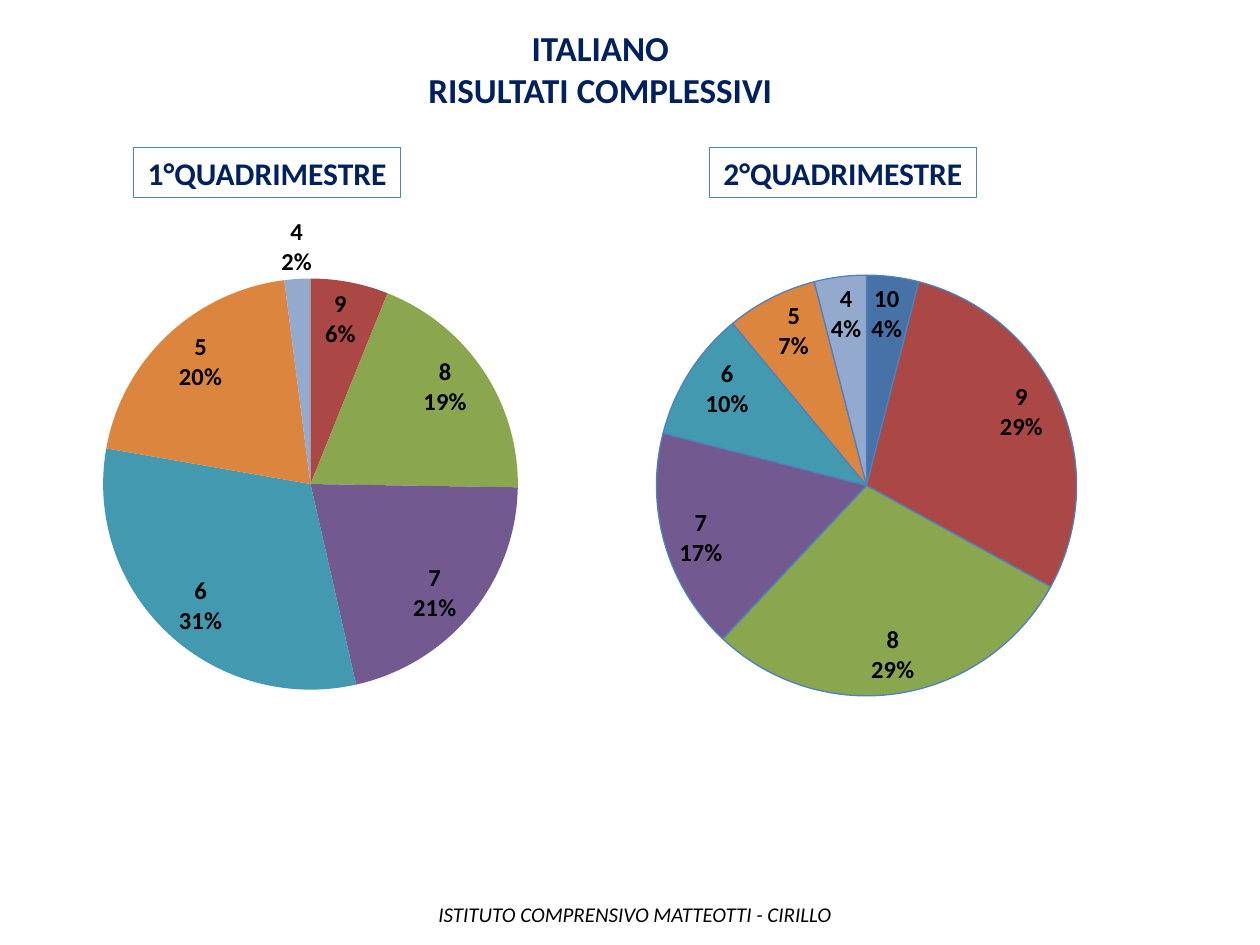
from pptx import Presentation
from pptx.chart.data import CategoryChartData as Data
from pptx.dml.color import RGBColor
from pptx.enum.chart import XL_CHART_TYPE as Kind, XL_LABEL_POSITION as Pos
from pptx.enum.shapes import MSO_SHAPE as Form
from pptx.enum.text import MSO_ANCHOR as Anchor, PP_ALIGN as Align
from pptx.oxml import parse_xml
from pptx.oxml.ns import nsdecls, qn
from pptx.util import Inches, Pt

FONT, NAVY, BLUE, BLACK = "Calibri", "002060", "4F81BD", "000000"
TITLE = ["ITALIANO", "RISULTATI COMPLESSIVI"]
FOOTER = "ISTITUTO COMPRENSIVO MATTEOTTI - CIRILLO"
GRADES = ["10", "9", "8", "7", "6", "5", "4"]
COLORS = ["4672A8", "AB4744", "8AA64F", "725990", "4299B0", "DC853E", "93A9CE"]
TERMS = [
    {"name": "1°QUADRIMESTRE", "left": 1.06, "vals": [0, 6, 19, 21, 31, 20, 2],
     "box": (0.67, 1.68, 3.7, 4.51), "plot": (0.04, 0.11, 0.89, 0.73),
     "edge": None},
    {"name": "2°QUADRIMESTRE", "left": 5.63, "vals": [4, 29, 29, 17, 10, 7, 4],
     "box": (4.92, 1.94, 3.63, 4.35), "plot": (0.08, 0.05, 0.92, 0.78),
     "edge": BLUE},
]


def rgb(code):
    return RGBColor.from_string(code)


def style(font, size, color, bold=False, italic=False):
    font.name, font.size = FONT, Pt(size)
    font.bold, font.italic = bold, italic
    font.color.rgb = rgb(color)


def write(frame, lines, size, color, anchor, **look):
    frame.word_wrap = True
    frame.vertical_anchor = anchor
    for i, line in enumerate(lines):
        para = frame.add_paragraph() if i else frame.paragraphs[0]
        para.alignment = Align.CENTER
        run = para.add_run()
        run.text = line
        style(run.font, size, color, **look)


def place(chart, plot):
    area = chart.plots[0]._element.getparent()
    for old in area.findall(qn("c:layout")):
        area.remove(old)
    parts = "".join(f'<c:{tag} val="{val}"/>' for tag, val in zip("xywh", plot))
    area.insert(0, parse_xml(
        f'<c:layout {nsdecls("c")}><c:manualLayout><c:layoutTarget val="inner"/>'
        '<c:xMode val="edge"/><c:yMode val="edge"/>'
        f'{parts}</c:manualLayout></c:layout>'))


def set_labels(row, vals):
    labels = row.data_labels
    style(labels.font, 14, BLACK, bold=True)
    labels.number_format, labels.number_format_is_linked = "0%", False
    labels.position = Pos.BEST_FIT
    labels.show_value = False
    labels.show_category_name = labels.show_percentage = True
    node = labels._element
    last = node.find(qn("c:showBubbleSize"))
    if last is None:
        last = node.find(qn("c:showPercent"))
    last.addnext(parse_xml(f"<c:separator {nsdecls('c')}>\n</c:separator>"))
    for i, val in enumerate(vals):
        if val == 0:
            node.insert(0, parse_xml(
                f'<c:dLbl {nsdecls("c")}><c:idx val="{i}"/><c:delete val="1"/></c:dLbl>'))


def add_pie(slide, term):
    data = Data()
    data.categories = GRADES
    data.add_series("Series 1", term["vals"])
    chart = slide.shapes.add_chart(Kind.PIE, *map(Inches, term["box"]), data).chart
    chart.has_title = chart.has_legend = False
    style(chart.font, 18, BLACK)
    place(chart, term["plot"])
    pie = chart.plots[0]
    pie.vary_by_categories = True
    row = pie.series[0]
    set_labels(row, term["vals"])
    for i, color in enumerate(COLORS):
        look = row.points[i].format
        look.fill.solid()
        look.fill.fore_color.rgb = rgb(color)
        if term["edge"]:
            look.line.color.rgb = rgb(term["edge"])
            look.line.width = Pt(0.75)
        else:
            look.line.fill.background()


def add_tag(slide, term):
    tag = slide.shapes.add_shape(
        Form.RECTANGLE, *map(Inches, (term["left"], 1.17, 2.12, 0.4)))
    tag.shadow.inherit = False
    tag.fill.background()
    tag.line.color.rgb = rgb(BLUE)
    tag.line.width = Pt(0.75)
    write(tag.text_frame, [term["name"]], 18, NAVY, Anchor.MIDDLE, bold=True)


def main():
    deck = Presentation()
    deck.slide_width, deck.slide_height = Inches(10), Inches(7.5)
    slide = deck.slides.add_slide(deck.slide_layouts[5])
    title = slide.shapes.title
    title.left, title.top, title.width, title.height = map(Inches, (0.83, 0.16, 7.87, 1))
    write(title.text_frame, TITLE, 20, NAVY, Anchor.TOP, bold=True)
    for term in TERMS:
        add_pie(slide, term)
        add_tag(slide, term)
    foot = slide.shapes.add_textbox(*map(Inches, (3.29, 7.11, 3.5, 0.3)))
    write(foot.text_frame, [FOOTER], 12, BLACK, Anchor.TOP, italic=True)
    deck.save("out.pptx")


if __name__ == "__main__":
    main()
